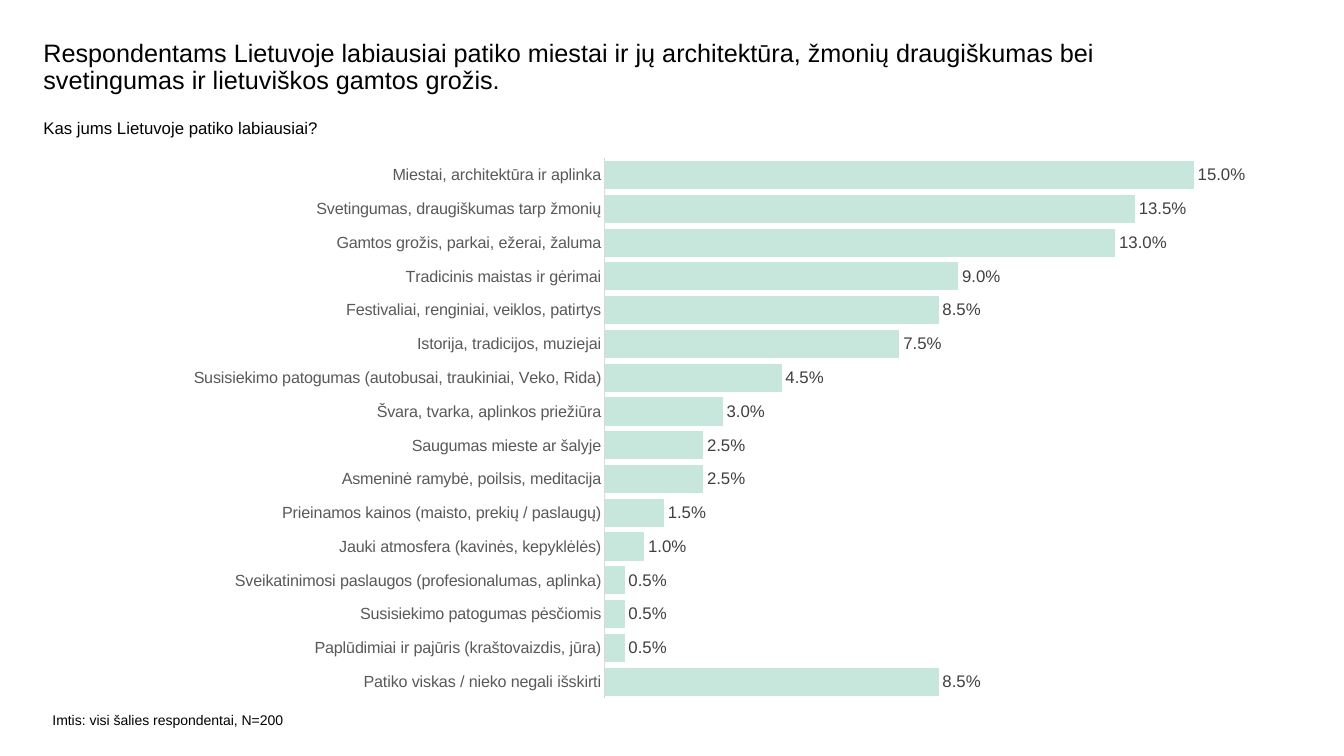
from pptx import Presentation
from pptx.chart.data import CategoryChartData
from pptx.dml.color import RGBColor
from pptx.enum.chart import XL_CHART_TYPE as Kind, XL_LABEL_POSITION as Spot
from pptx.enum.chart import XL_TICK_MARK as Tick
from pptx.enum.text import MSO_ANCHOR as Anchor, PP_ALIGN as Align
from pptx.oxml import parse_xml
from pptx.oxml.ns import nsdecls
from pptx.util import Inches, Pt

# Content
TITLE = ("Respondentams Lietuvoje labiausiai patiko miestai ir jų architektūra, "
         "žmonių draugiškumas bei svetingumas ir lietuviškos gamtos grožis.")
QUERY = "Kas jums Lietuvoje patiko labiausiai?"
BASE = "Imtis: visi šalies respondentai, N=200"
SHARES = [  # top to bottom
    ("Miestai, architektūra ir aplinka", 0.15),
    ("Svetingumas, draugiškumas tarp žmonių", 0.135),
    ("Gamtos grožis, parkai, ežerai, žaluma", 0.13),
    ("Tradicinis maistas ir gėrimai", 0.09),
    ("Festivaliai, renginiai, veiklos, patirtys", 0.085),
    ("Istorija, tradicijos, muziejai", 0.075),
    ("Susisiekimo patogumas (autobusai, traukiniai, Veko, Rida)", 0.045),
    ("Švara, tvarka, aplinkos priežiūra", 0.03),
    ("Saugumas mieste ar šalyje", 0.025),
    ("Asmeninė ramybė, poilsis, meditacija", 0.025),
    ("Prieinamos kainos (maisto, prekių / paslaugų)", 0.015),
    ("Jauki atmosfera (kavinės, kepyklėlės)", 0.01),
    ("Sveikatinimosi paslaugos (profesionalumas, aplinka)", 0.005),
    ("Susisiekimo patogumas pėsčiomis", 0.005),
    ("Paplūdimiai ir pajūris (kraštovaizdis, jūra)", 0.005),
    ("Patiko viskas / nieko negali išskirti", 0.085),
]
FORMAT = "0.0%"
CHART = (1.79, 1.47, 10.66, 5.57)
PLOT = (6.0, 1.57, 6.23, 5.36)


def color(code):
    return RGBColor.from_string(code)


def style(font, size, code):
    font.name, font.size, font.bold = "Arial", Pt(size), False
    font.color.rgb = color(code)


def write(shape, text, box, size):
    shape.left, shape.top, shape.width, shape.height = map(Inches, box)
    frame = shape.text_frame
    frame.margin_left = frame.margin_right = 0
    frame.margin_top = frame.margin_bottom = 0
    frame.word_wrap, frame.vertical_anchor = True, Anchor.TOP
    frame.text = text
    par = frame.paragraphs[0]
    par.alignment = Align.LEFT
    style(par.font, size, "000000")
    return par


deck = Presentation()
deck.slide_width, deck.slide_height = Inches(13.33), Inches(7.5)
slide = deck.slides.add_slide(deck.slide_layouts[5])

# Title, question and sample note
head = write(slide.shapes.title, TITLE, (0.43, 0.4, 11.25, 0.6), 18)
head.line_spacing = 0.9
for text, box, size in [(QUERY, (0.43, 1.17, 11.89, 0.25), 12),
                        (BASE, (0.52, 7.06, 3.86, 0.2), 10)]:
    write(slide.shapes.add_textbox(0, 0, 0, 0), text, box, size)

# Bar chart: the first category sits at the bottom
data = CategoryChartData(number_format=FORMAT)
rows = SHARES[::-1]
data.categories = [name for name, share in rows]
data.add_series("Series 1", [share for name, share in rows])
chart = slide.shapes.add_chart(Kind.BAR_CLUSTERED, *map(Inches, CHART), data).chart
chart.has_legend = chart.has_title = False
style(chart.font, 10, "000000")

# Axes
cats, vals = chart.category_axis, chart.value_axis
cats.major_tick_mark = cats.minor_tick_mark = Tick.NONE
style(cats.tick_labels.font, 11.5, "595959")
cats.format.line.color.rgb = color("D9D9D9")
cats.format.line.width = Pt(0.75)
vals.minimum_scale, vals.maximum_scale = 0, 0.16
vals.has_major_gridlines = vals.visible = False

# Bars and their labels
plot = chart.plots[0]
plot.gap_width, plot.vary_by_categories = 20, False
bars = plot.series[0]
bars.format.fill.solid()
bars.format.fill.fore_color.rgb = color("C7E6DC")
tags = bars.data_labels
tags.show_value, tags.position = True, Spot.OUTSIDE_END
tags.number_format, tags.number_format_is_linked = FORMAT, False
style(tags.font, 12, "404040")

# Fixed plot area, as shares of the chart frame
left, top, width, height = CHART
parts = {"x": (PLOT[0] - left) / width, "y": (PLOT[1] - top) / height,
         "w": PLOT[2] / width, "h": PLOT[3] / height}
modes = "".join(f'<c:{key}Mode val="edge"/>' for key in "xy")
sizes = "".join(f'<c:{key} val="{part:.4f}"/>' for key, part in parts.items())
area = chart._chartSpace.chart.plotArea
for old in area.findall("{*}layout"):
    area.remove(old)
area.insert(0, parse_xml(
    f'<c:layout {nsdecls("c")}><c:manualLayout><c:layoutTarget val="inner"/>'
    f'{modes}{sizes}</c:manualLayout></c:layout>'))

deck.save("out.pptx")
